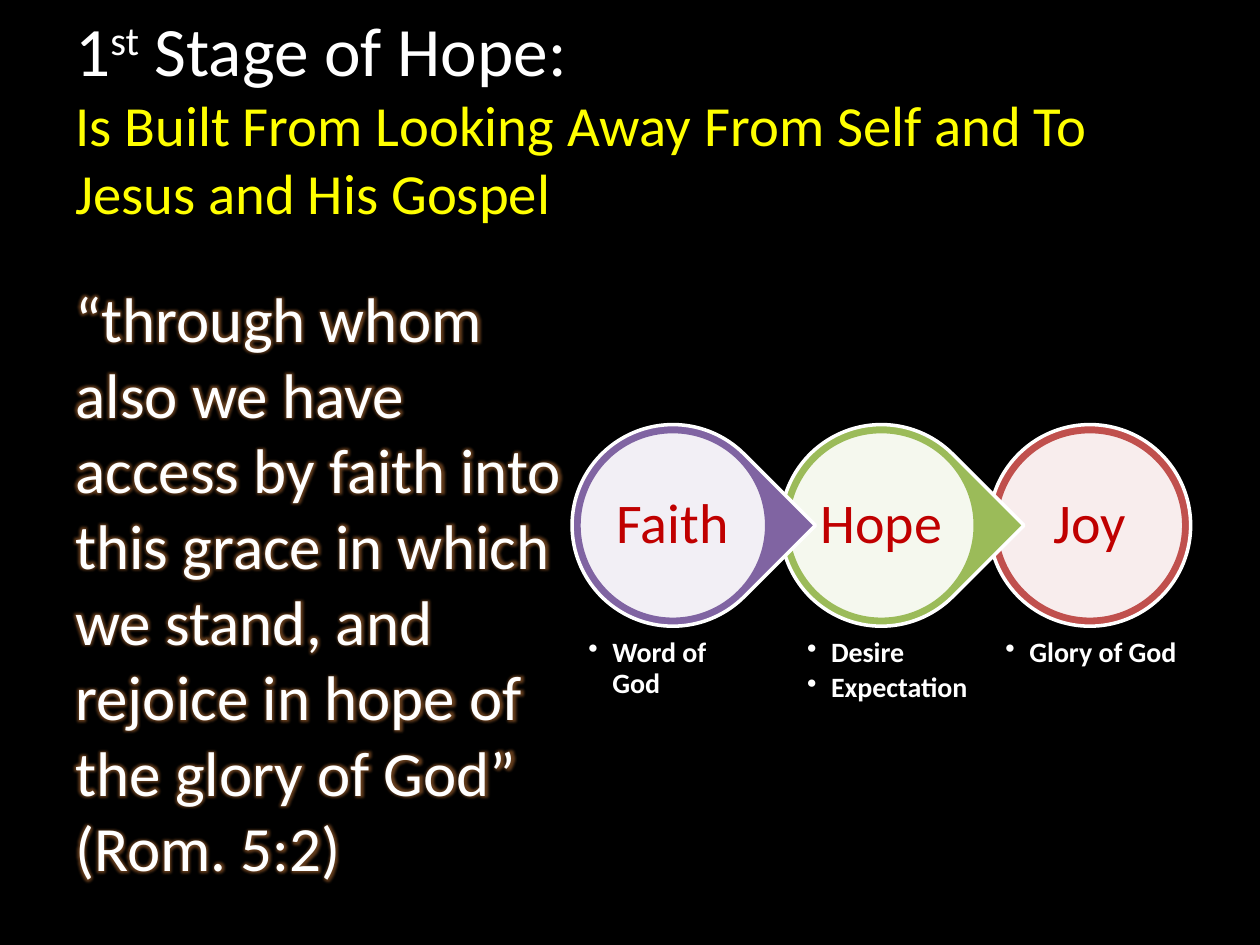
from dataclasses import dataclass

from lxml import etree
from pptx import Presentation
from pptx.dml.color import RGBColor
from pptx.enum.shapes import MSO_SHAPE
from pptx.enum.text import MSO_ANCHOR, PP_ALIGN
from pptx.oxml.ns import qn
from pptx.util import Inches, Pt

OVAL, TEARDROP = MSO_SHAPE.OVAL, MSO_SHAPE.TEAR
TOP, MIDDLE = MSO_ANCHOR.TOP, MSO_ANCHOR.MIDDLE
LEFT, CENTER = PP_ALIGN.LEFT, PP_ALIGN.CENTER


@dataclass(frozen=True)
class Theme:
    font: str = "Calibri"
    background: str = "000000"
    white: str = "FFFFFF"
    subtitle: str = "FFFF00"
    label: str = "C00000"
    glow: str = "F79646"
    purple: str = "8064A2"
    green: str = "9BBB59"
    red: str = "C0504D"
    title_size: float = 39.6
    subtitle_size: float = 32.4
    verse_size: float = 36
    label_size: float = 32
    caption_size: float = 16
    outline: float = 2


class SlideBuilder:
    def __init__(self, slide, theme):
        self.s = slide
        self.theme = theme
        fill = slide.background.fill
        fill.solid()
        fill.fore_color.rgb = RGBColor.from_string(theme.background)

    def style(self, r, size, color, bold=False):
        r.font.name = self.theme.font
        r.font.size = Pt(size)
        r.font.bold = bold
        r.font.color.rgb = RGBColor.from_string(color)

    def box(self, x, y, w, h, anchor=TOP, inset=None):
        sp = self.s.shapes.add_textbox(Inches(x), Inches(y), Inches(w), Inches(h))
        tf = sp.text_frame
        tf.word_wrap = True
        tf.vertical_anchor = anchor
        if inset is not None:
            tf.margin_left = tf.margin_right = Inches(inset)
            tf.margin_top = tf.margin_bottom = Inches(inset)
        return tf

    def title(self, parts, subtitle, x, y, w, h):
        th = self.theme
        p = self.box(x, y, w, h, MIDDLE).paragraphs[0]
        for text, baseline in parts:
            r = p.add_run()
            r.text = text
            self.style(r, th.title_size, th.white)
            if baseline:
                r._r.get_or_add_rPr().set("baseline", str(baseline * 1000))
        p.add_line_break()
        r = p.add_run()
        r.text = subtitle
        self.style(r, th.subtitle_size, th.subtitle)

    def glowing_text(self, text, x, y, w, h):
        p = self.box(x, y, w, h).paragraphs[0]
        p.text = text
        r = p.runs[0]
        self.style(r, self.theme.verse_size, self.theme.white)
        # The effect list follows the fill in the run properties
        effects = etree.Element(qn("a:effectLst"))
        glow = etree.SubElement(effects, qn("a:glow"), rad=str(Pt(5)))
        color = etree.SubElement(glow, qn("a:srgbClr"), val=self.theme.glow)
        etree.SubElement(color, qn("a:alpha"), val="40000")
        r._r.get_or_add_rPr().find(qn("a:solidFill")).addnext(effects)

    def shape(self, kind, x, y, size, fill, line, alpha=None):
        sp = self.s.shapes.add_shape(kind, Inches(x), Inches(y), Inches(size), Inches(size))
        sp.shadow.inherit = False
        sp.fill.solid()
        sp.fill.fore_color.rgb = RGBColor.from_string(fill)
        sp.line.color.rgb = RGBColor.from_string(line)
        sp.line.width = Pt(self.theme.outline)
        if alpha is not None:
            color = sp._element.spPr.find(qn("a:solidFill"))[0]
            etree.SubElement(color, qn("a:alpha"), val=str(alpha * 1000))
        return sp

    def label(self, text, x, y, size):
        p = self.box(x, y, size, size, MIDDLE, 0.04).paragraphs[0]
        p.text = text
        p.alignment = CENTER
        p.line_spacing = 0.9
        self.style(p.runs[0], self.theme.label_size, self.theme.label)

    def bullets(self, items, x, y, w, h):
        tf = self.box(x, y, w, h, inset=0.07)
        tf.text = "\n".join(items)
        for p in tf.paragraphs:
            p.alignment = LEFT
            p.line_spacing = 0.9
            p.space_after = Pt(0.15 * self.theme.caption_size)
            pPr = p._p.get_or_add_pPr()
            pPr.set("marL", str(Inches(0.19)))
            pPr.set("indent", str(-Inches(0.19)))
            etree.SubElement(pPr, qn("a:buChar"), char="•")
            self.style(p.runs[0], self.theme.caption_size, self.theme.white, bold=True)

    def stage(self, kind, name, color, x, y):
        white = self.theme.white
        outer = self.shape(kind, x, y, 1.6, color, white)
        if kind == TEARDROP:
            outer.adjustments[0] = 1
            outer.rotation = 45
        self.shape(OVAL, x + 0.055, y + 0.055, 1.49, white, color, alpha=90)
        self.label(name, x + 0.265, y + 0.265, 1.07)


def main():
    prs = Presentation()
    prs.slide_width, prs.slide_height = Inches(10), Inches(7.5)
    th = Theme()
    b = SlideBuilder(prs.slides.add_slide(prs.slide_layouts[6]), th)

    # Heading and verse
    b.title([("1", 0), ("st", 30), (" Stage of Hope:", 0)],
            "Is Built From Looking Away From Self and To Jesus and His Gospel",
            0.5, 0.3, 9, 1.25)
    b.glowing_text("“through whom also we have access by faith into this grace in which "
                   "we stand, and rejoice in hope of the glory of God” (Rom. 5:2)",
                   0.5, 2.17, 4.08, 5.75)

    # Chain of stages, last one first so that each point overlaps the next circle
    # kind, name, colour, bullets, bullet offset, bullet width
    stages = [
        (TEARDROP, "Faith", th.purple, ["Word of God"], 0.06, 1.45),
        (TEARDROP, "Hope", th.green, ["Desire", "Expectation"], 0.14, 1.49),
        (OVAL, "Joy", th.red, ["Glory of God"], 0.06, 1.52),
    ]
    left, top, step = 4.54, 3.37, 1.655
    for i, (kind, name, color, items, offset, width) in reversed(list(enumerate(stages))):
        x = left + i * step
        b.stage(kind, name, color, x, top)
        b.bullets(items, x + offset, 5, width, 0.88)

    prs.save("out.pptx")


if __name__ == "__main__":
    main()
